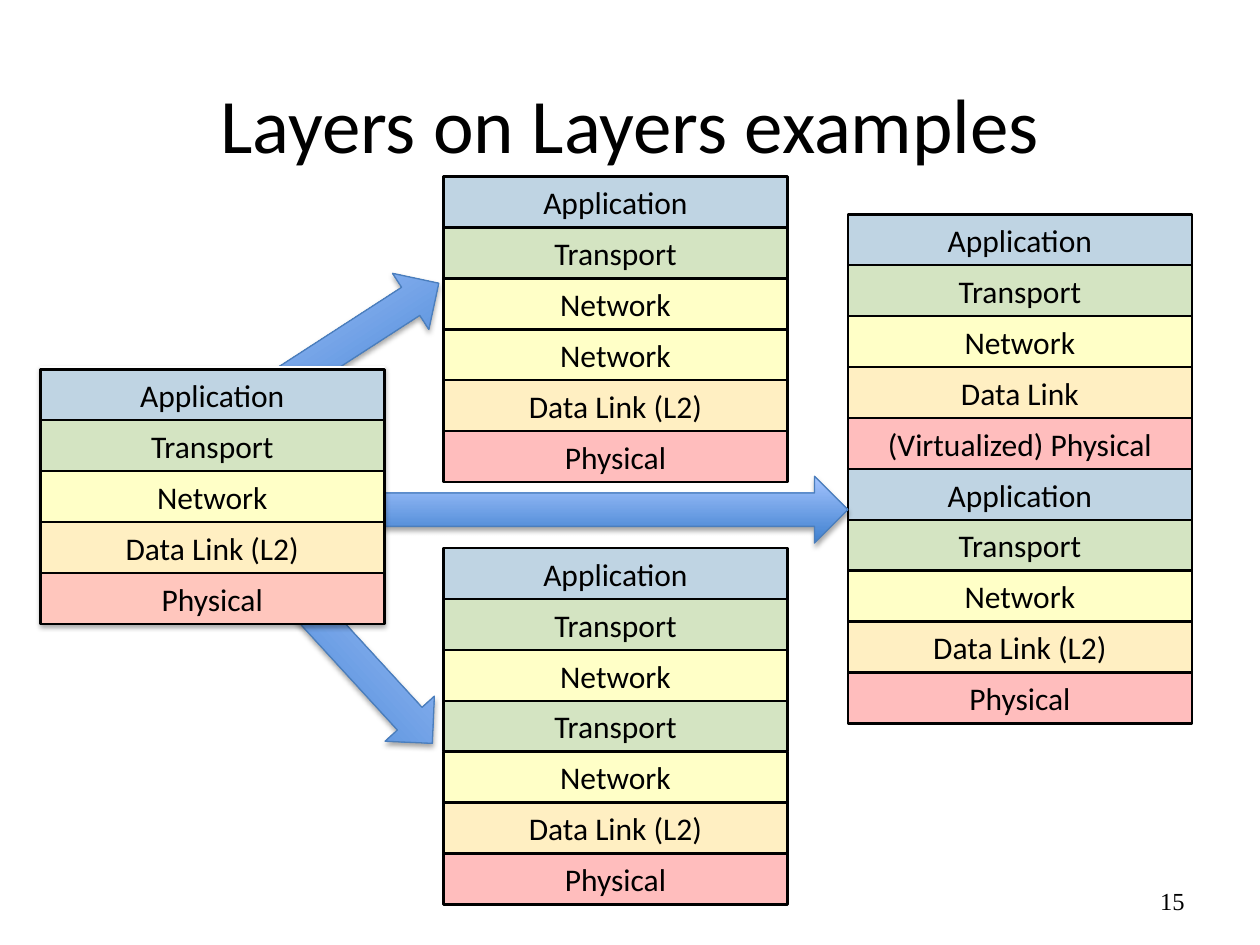
from pptx import Presentation
from pptx.dml.color import RGBColor
from pptx.enum.shapes import MSO_SHAPE as Kind
from pptx.enum.text import MSO_ANCHOR as Anchor, PP_ALIGN as Align
from pptx.oxml.ns import qn
from pptx.util import Inches, Pt
from lxml.etree import SubElement

WIDE, HIGH = Inches(10), Inches(7.5)
# Boxes are left, top, width, height in percent of the slide
COL = 27.3
ROW = 5.39
LEFT, MID, RIGHT = 3.2, 35.2, 67.3

# Layer name: fill colour and opacity in percent
LAYERS = {
    "Application": ("005493", 25),
    "Transport": ("4E8F00", 24),
    "Network": ("FFFF00", 22),
    "Data Link": ("FFC000", 24),
    "Data Link (L2)": ("FFC000", 24),
    "Physical": ("FF0000", 26),
    "(Virtualized) Physical": ("FF0000", 26),
}
UPPER = ["Application", "Transport", "Network"]
LOWER = ["Data Link (L2)", "Physical"]
BASIC = UPPER + LOWER


def rgb(code):
    return RGBColor.from_string(code)


def place(box):
    """Turn a percent box into slide lengths."""
    return [int(share * side / 100)
            for share, side in zip(box, (WIDE, HIGH, WIDE, HIGH))]


def write(shape, text, size, align=Align.CENTER, font="Calibri"):
    frame = shape.text_frame
    frame.word_wrap = True
    frame.vertical_anchor = Anchor.MIDDLE
    para = frame.paragraphs[0]
    para.text = text
    para.alignment = align
    para.font.name = font
    para.font.size = Pt(size)
    para.font.color.rgb = rgb("000000")


def add_label(slide, box, *style):
    write(slide.shapes.add_textbox(*place(box)), *style)


def add_form(slide, kind, box, line, weight):
    form = slide.shapes.add_shape(kind, *place(box))
    form.shadow.inherit = False
    form.line.color.rgb = rgb(line)
    form.line.width = Pt(weight)
    return form


def cast_shadow(form):
    effects = form._element.spPr.find(qn("a:effectLst"))
    shade = SubElement(effects, qn("a:outerShdw"), blurRad=str(Pt(3.1)),
                       dist=str(Pt(1.8)), dir="5400000", rotWithShape="0")
    color = SubElement(shade, qn("a:srgbClr"), val="000000")
    SubElement(color, qn("a:alpha"), val="35000")


def add_stack(slide, box, names, fills=LAYERS):
    left, top, width, height = box
    step = height / len(names)
    for row, name in enumerate(names):
        cell = (left, top + row * step, width, step)
        layer = add_form(slide, Kind.RECTANGLE, cell, "000000", 1.5)
        color, alpha = fills[name]
        layer.fill.solid()
        layer.fill.fore_color.rgb = rgb(color)
        tint = layer._element.spPr.find(qn("a:solidFill"))[0]
        SubElement(tint, qn("a:alpha"), val=str(alpha * 1000))
        write(layer, name, 18)


def add_arrow(slide, box, turn):
    arrow = add_form(slide, Kind.RIGHT_ARROW, box, "4B7EBC", 0.75)
    arrow.rotation = turn
    arrow.fill.gradient()
    arrow.fill.gradient_angle = 90
    for stop, color in zip(arrow.fill.gradient_stops, ("3F80CE", "A4C4FF")):
        stop.color.rgb = rgb(color)
    cast_shadow(arrow)


def add_source(slide, box):
    """Add the shaded starting stack on an opaque back."""
    left, top, width, height = box
    back = add_form(slide, Kind.RECTANGLE, (left, top - 0.27, width, height + 0.27),
                    "FFFFFF", 0.75)
    back.fill.solid()
    back.fill.fore_color.rgb = rgb("FFFFFF")
    cast_shadow(back)
    add_stack(slide, box, BASIC, {**LAYERS, "Physical": ("FF2600", 26)})


def main():
    deck = Presentation()
    deck.slide_width, deck.slide_height = WIDE, HIGH
    slide = deck.slides.add_slide(deck.slide_layouts[6])

    add_label(slide, (5, 4.67, 90, 16.67), "Layers on Layers examples", 44)

    virtual = UPPER + ["Data Link", "(Virtualized) Physical"]
    stacks = [
        (MID, 18.67, UPPER + ["Network"] + LOWER),
        (RIGHT, 22.67, virtual + BASIC),
        (MID, 58, UPPER + ["Transport", "Network"] + LOWER),
    ]
    for left, top, names in stacks:
        add_stack(slide, (left, top, COL, ROW * len(names)), names)

    arrows = [(19, 32.67, 17.2, 327.1), (19.9, 66.67, 17.2, 47.5),
              (28.6, 50.4, 38.7, 0)]
    for left, top, width, turn in arrows:
        add_arrow(slide, (left, top, width, 7.07), turn)

    add_source(slide, (LEFT, 39.07, COL, ROW * len(BASIC)))
    add_label(slide, (71.7, 92.67, 23.3, 5.33), "15", 14, Align.RIGHT,
              "Times New Roman")
    deck.save("out.pptx")


if __name__ == "__main__":
    main()
